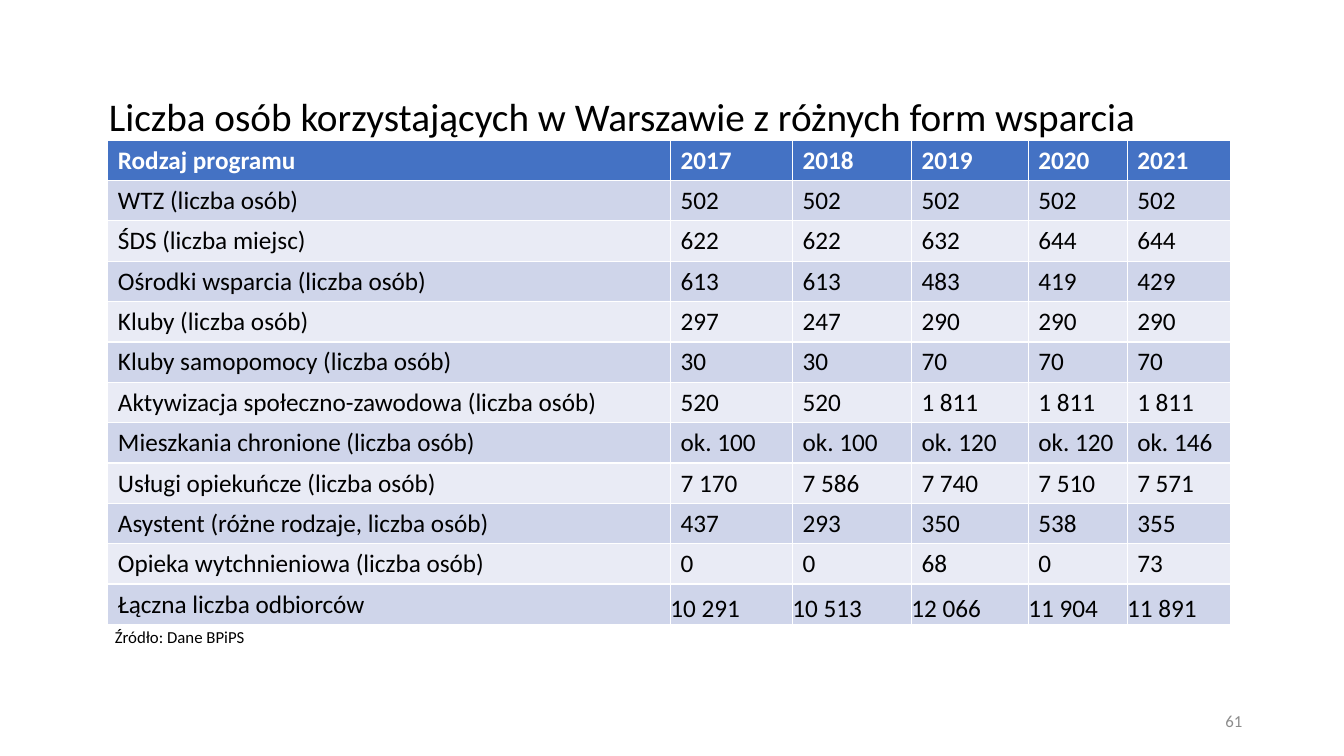
from dataclasses import dataclass

from pptx import Presentation
from pptx.dml.color import RGBColor
from pptx.enum.text import MSO_ANCHOR, PP_ALIGN
from pptx.util import Inches, Pt


@dataclass(frozen=True)
class Theme:
    font: str = "Calibri"
    ink: str = "000000"
    header_ink: str = "FFFFFF"
    number_ink: str = "8C8C8C"
    header_fill: str = "4472C4"
    bands: tuple = ("E9EBF5", "CFD5EA")
    title_size: int = 28
    table_size: int = 18
    small_size: int = 12


@dataclass(frozen=True)
class Box:
    column: int
    row: int
    columns: int
    rows: int

    def place(self):
        return [grid(n) for n in (self.column, self.row, self.columns, self.rows)]


THEME = Theme()
GRID_PER_INCH = 100
SLIDE = Box(0, 0, 1333, 750)
TITLE_BOX = Box(98, 86, 1135, 63)
TABLE_BOX = Box(107, 139, 1114, 480)
SOURCE_BOX = Box(104, 617, 820, 30)
NUMBER_BOX = Box(942, 695, 300, 40)
COLUMN_SPANS = (558, 121, 118, 116, 98, 103)

PROGRAMMES = (
    ("Rodzaj programu", "2017", "2018", "2019", "2020", "2021"),
    ("WTZ (liczba osób)", "502", "502", "502", "502", "502"),
    ("ŚDS (liczba miejsc)", "622", "622", "632", "644", "644"),
    ("Ośrodki wsparcia (liczba osób)", "613", "613", "483", "419", "429"),
    ("Kluby (liczba osób)", "297", "247", "290", "290", "290"),
    ("Kluby samopomocy (liczba osób)", "30", "30", "70", "70", "70"),
    ("Aktywizacja społeczno-zawodowa (liczba osób)", "520", "520", "1 811", "1 811", "1 811"),
    ("Mieszkania chronione (liczba osób)", "ok. 100", "ok. 100", "ok. 120", "ok. 120", "ok. 146"),
    ("Usługi opiekuńcze (liczba osób)", "7 170", "7 586", "7 740", "7 510", "7 571"),
    ("Asystent (różne rodzaje, liczba osób)", "437", "293", "350", "538", "355"),
    ("Opieka wytchnieniowa (liczba osób)", "0", "0", "68", "0", "73"),
    ("Łączna liczba odbiorców", "10 291", "10 513", "12 066", "11 904", "11 891"),
)


def grid(count):
    return Inches(count / GRID_PER_INCH)


def write(frame, words, size, color, bold=False, align=PP_ALIGN.LEFT):
    paragraph = frame.paragraphs[0]
    paragraph.alignment = align
    run = paragraph.add_run()
    run.text = words
    run.font.name = THEME.font
    run.font.size = Pt(size)
    run.font.bold = bold
    run.font.color.rgb = RGBColor.from_string(color)
    return paragraph


def add_title(slide, box, words):
    title = slide.shapes.title
    title.left, title.top, title.width, title.height = box.place()
    title.text_frame.vertical_anchor = MSO_ANCHOR.MIDDLE
    write(title.text_frame, words, THEME.title_size, THEME.ink).line_spacing = 0.9


def add_note(slide, box, words, color, align=PP_ALIGN.LEFT, anchor=MSO_ANCHOR.TOP):
    frame = slide.shapes.add_textbox(*box.place()).text_frame
    frame.word_wrap = True
    frame.vertical_anchor = anchor
    write(frame, words, THEME.small_size, color, align=align)


def fill_cell(cell, words, is_header, fill):
    cell.fill.solid()
    cell.fill.fore_color.rgb = RGBColor.from_string(fill)
    color = THEME.header_ink if is_header else THEME.ink
    write(cell.text_frame, words, THEME.table_size, color, bold=is_header)


def set_total(cell):
    cell.vertical_anchor = MSO_ANCHOR.BOTTOM
    cell.margin_left = cell.margin_right = cell.margin_top = cell.margin_bottom = 0


def add_programme_table(slide, box, programmes):
    table = slide.shapes.add_table(len(programmes), len(COLUMN_SPANS), *box.place()).table
    for column, span in zip(table.columns, COLUMN_SPANS):
        column.width = grid(span)
    for index, programme in enumerate(programmes):
        table.rows[index].height = grid(box.rows / len(programmes))
        is_header = index == 0
        fill = THEME.header_fill if is_header else THEME.bands[index % 2]
        for position, words in enumerate(programme):
            fill_cell(table.cell(index, position), words, is_header, fill)
    for position in range(1, len(COLUMN_SPANS)):
        set_total(table.cell(len(programmes) - 1, position))


def main():
    deck = Presentation()
    deck.slide_width, deck.slide_height = SLIDE.place()[2:]
    slide = deck.slides.add_slide(deck.slide_layouts[5])
    add_title(slide, TITLE_BOX, "Liczba osób korzystających w Warszawie z różnych form wsparcia")
    add_note(slide, NUMBER_BOX, "61", THEME.number_ink, PP_ALIGN.RIGHT, MSO_ANCHOR.MIDDLE)
    add_programme_table(slide, TABLE_BOX, PROGRAMMES)
    add_note(slide, SOURCE_BOX, "Źródło: Dane BPiPS", THEME.ink)
    deck.save("out.pptx")


if __name__ == "__main__":
    main()
